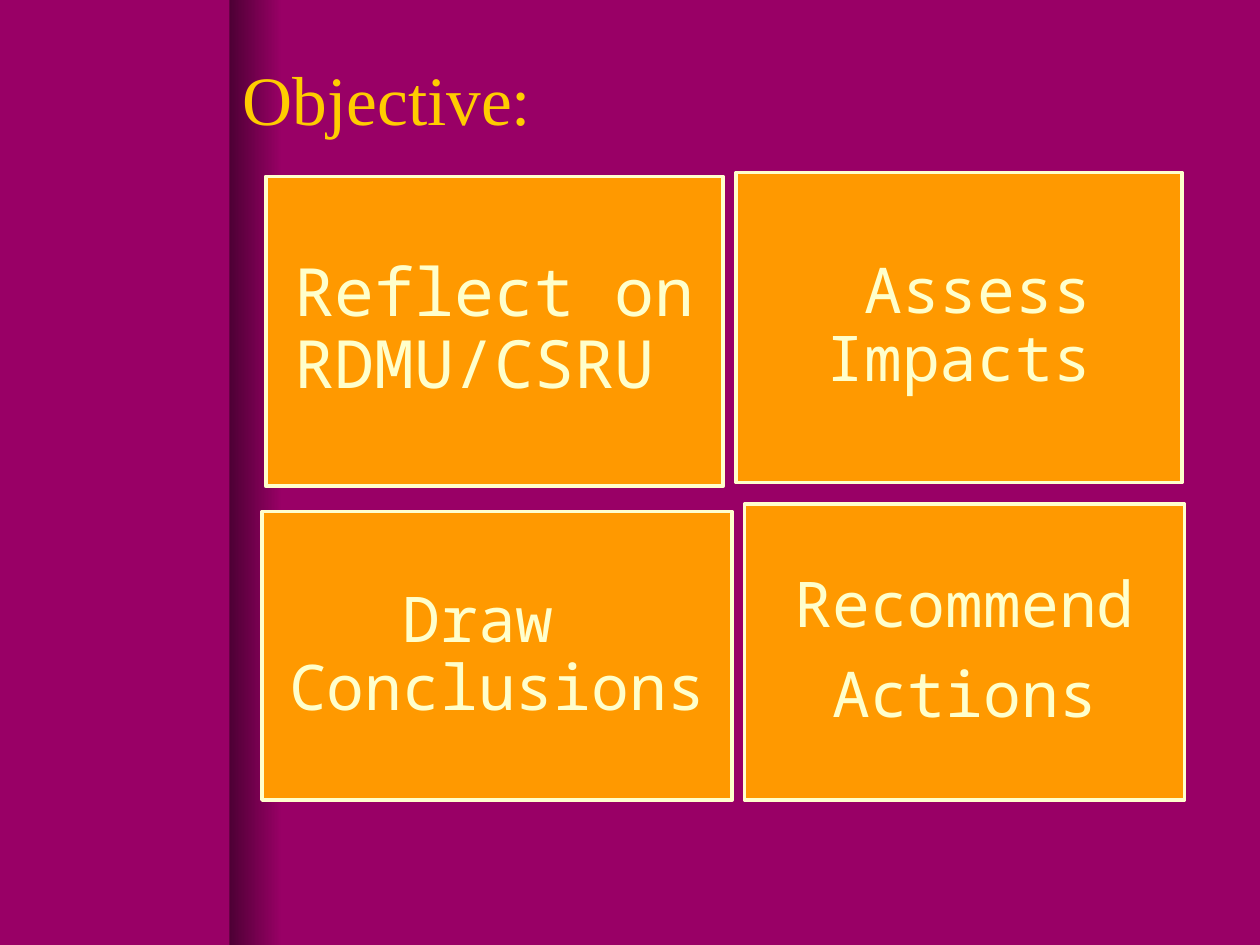
from pptx import Presentation
from pptx.dml.color import RGBColor
from pptx.enum import shapes, text
from pptx.util import Inches, Pt

CREAM = "FFFFCC"


def rgb(value):
    return RGBColor.from_string(value)


def write(shape, lines, *, font, size, color, align, anchor, inset=0.1,
          inset_y=0.05, spacing=1.0, after=0):
    frame = shape.text_frame
    frame.word_wrap = True
    frame.vertical_anchor = anchor
    frame.margin_left = frame.margin_right = Inches(inset)
    frame.margin_top = frame.margin_bottom = Inches(inset_y)
    frame.text = "\n".join(lines)
    for paragraph in frame.paragraphs:
        paragraph.alignment = align
        paragraph.line_spacing = spacing
        paragraph.space_before = Pt(0)
        paragraph.space_after = Pt(after)
        for run in paragraph.runs:
            run.font.name = font
            run.font.size = Pt(size)
            run.font.color.rgb = rgb(color)


prs = Presentation()
prs.slide_width, prs.slide_height = Inches(10), Inches(7.5)
slide = prs.slides.add_slide(prs.slide_layouts[6])
slide.background.fill.solid()
slide.background.fill.fore_color.rgb = rgb("990066")

# Shaded fold beside the left margin
fold = slide.shapes.add_shape(shapes.MSO_SHAPE.RECTANGLE, Inches(1.82), 0,
                              Inches(0.42), prs.slide_height)
fold.shadow.inherit = False
fold.line.fill.background()
fold.fill.gradient()
fold.fill.gradient_angle = 0
for stop, color, position in zip(fold.fill.gradient_stops,
                                 ("4E0035", "990066"), (0, 1)):
    stop.color.rgb = rgb(color)
    stop.position = position

# Title
title = slide.shapes.add_textbox(Inches(1.83), Inches(0.4), Inches(7.33), Inches(0.75))
write(title, ["Objective:"], font="Times New Roman", size=39.6, color="FFCC00",
      align=text.PP_ALIGN.LEFT, anchor=text.MSO_ANCHOR.TOP)

# Four objectives: left, top, width, height, font size, lines
objectives = [
    (2.11, 1.40, 3.63, 2.46, 38, ["Reflect on RDMU/CSRU "]),
    (5.84, 1.37, 3.54, 2.46, 36, [" Assess Impacts"]),
    (2.08, 4.06, 3.73, 2.29, 36, ["Draw \vConclusions"]),
    (5.91, 4.00, 3.49, 2.35, 36, ["Recommend", "Actions"]),
]
for left, top, width, height, size, lines in objectives:
    card = slide.shapes.add_shape(shapes.MSO_SHAPE.RECTANGLE, Inches(left),
                                  Inches(top), Inches(width), Inches(height))
    card.shadow.inherit = False
    card.fill.solid()
    card.fill.fore_color.rgb = rgb("FF9900")
    card.line.color.rgb = rgb(CREAM)
    card.line.width = Pt(2)
    write(card, lines, font="Noto Sans Mono", size=size, color=CREAM,
          align=text.PP_ALIGN.CENTER, anchor=text.MSO_ANCHOR.MIDDLE,
          inset=0.15, inset_y=0.15, spacing=0.9, after=0.35 * size)

prs.save("out.pptx")
